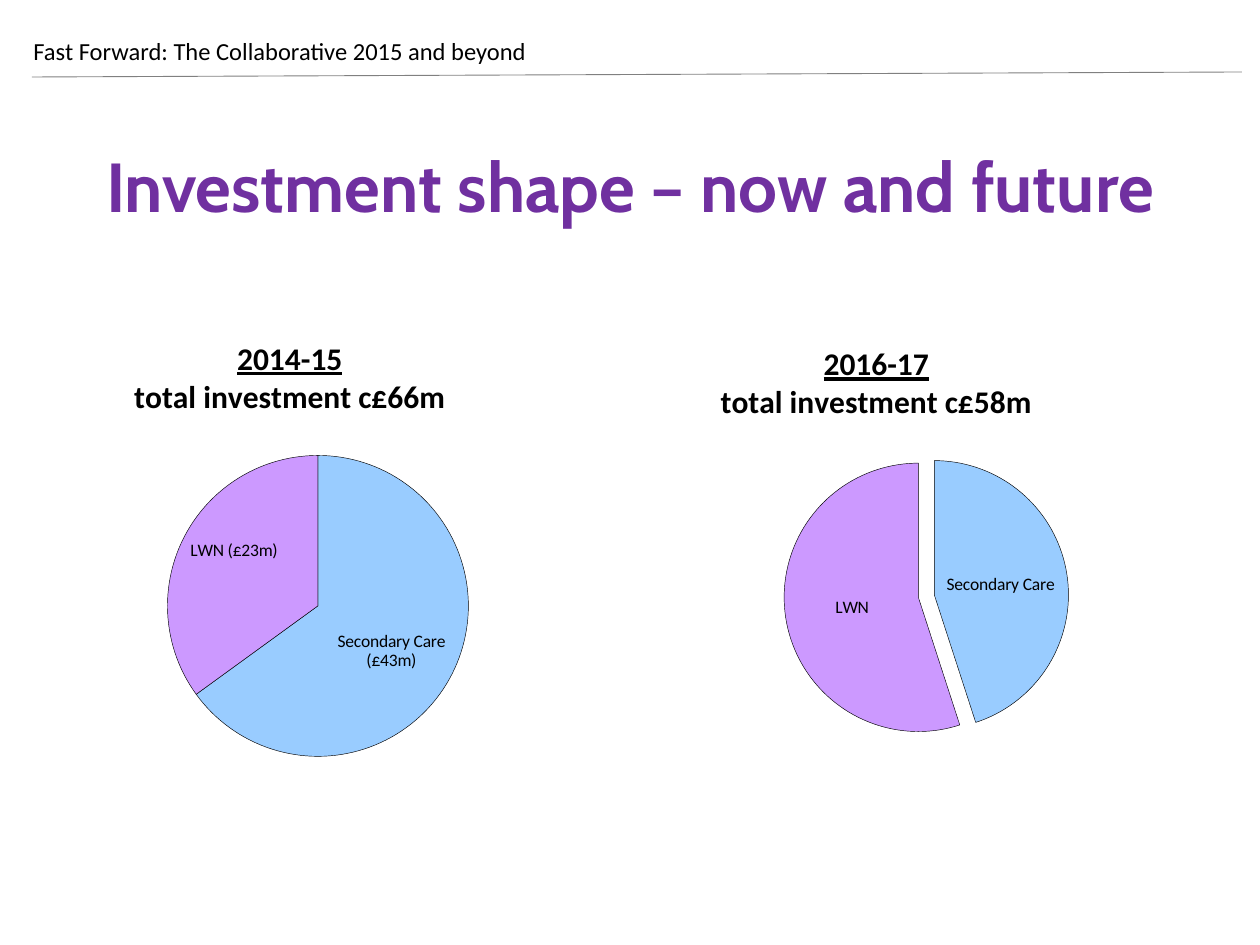
import pptx
import pptx.chart.data
import pptx.dml.color
import pptx.enum.chart
import pptx.enum.shapes
import pptx.enum.text
import pptx.oxml
import pptx.oxml.ns
import pptx.util

PX = 914400 // 126
BLACK = pptx.dml.color.RGBColor(0x00, 0x00, 0x00)
GREY = pptx.dml.color.RGBColor(0x80, 0x80, 0x80)
PURPLE = pptx.dml.color.RGBColor(0x70, 0x30, 0xA0)
SLICE_COLORS = (
    pptx.dml.color.RGBColor(0x99, 0xCC, 0xFF),
    pptx.dml.color.RGBColor(0xCC, 0x99, 0xFF),
)
LABEL_POSITION = pptx.enum.chart.XL_LABEL_POSITION
CENTER = pptx.enum.text.PP_ALIGN.CENTER


def px(*lengths):
    return [pptx.util.Emu(length * PX) for length in lengths]


def qn(tag):
    return pptx.oxml.ns.qn(tag)


def chart_element(tag, **attributes):
    element = pptx.oxml.parse_xml(f"<{tag} {pptx.oxml.ns.nsdecls('c')}/>")
    for name, value in attributes.items():
        element.set(name, str(value))
    return element


def format_font(font, size=10, name="Calibri", color=BLACK, bold=False, underline=False):
    font.size = pptx.util.Pt(size)
    font.name = name
    font.color.rgb = color
    font.bold = bold
    font.underline = underline


def add_text(paragraph, text, align=None, **font_format):
    paragraph.alignment = align
    run = paragraph.add_run()
    run.text = text
    format_font(run.font, **font_format)


def add_text_box(slide, box, text, **text_format):
    frame = slide.shapes.add_textbox(*px(*box)).text_frame
    frame.word_wrap = True
    frame.vertical_anchor = pptx.enum.text.MSO_ANCHOR.MIDDLE
    add_text(frame.paragraphs[0], text, **text_format)


def add_rule(slide, start, end):
    line = slide.shapes.add_connector(
        pptx.enum.shapes.MSO_CONNECTOR.STRAIGHT, *px(*start, *end))
    line.line.color.rgb = GREY
    line.line.width = pptx.util.Pt(0.5)
    line._element.spPr.append(
        pptx.oxml.parse_xml(f"<a:effectLst {pptx.oxml.ns.nsdecls('a')}/>"))


def set_layout(parent, index, inner=False, **fractions):
    """Place a chart part by fractions (x, y, w, h) of the chart's size."""
    for old in parent.findall(qn("c:layout")):
        parent.remove(old)
    manual = chart_element("c:manualLayout")
    if inner:
        manual.append(chart_element("c:layoutTarget", val="inner"))
    for key in "xy":
        manual.append(chart_element(f"c:{key}Mode", val="edge"))
    for key, value in fractions.items():
        manual.append(chart_element(f"c:{key}", val=value))
    layout = chart_element("c:layout")
    layout.append(manual)
    parent.insert(index, layout)


def add_chart_title(chart, year, total, x, y):
    title = chart.chart_title
    frame = title.text_frame
    add_text(frame.paragraphs[0], year, align=CENTER, size=18, bold=True, underline=True)
    add_text(frame.add_paragraph(), total, align=CENTER, size=18, bold=True)
    set_layout(title._element, 1, x=x, y=y)


def add_pie(slide, box, slices, title, plot_area, label_position, explosion=0):
    data = pptx.chart.data.CategoryChartData()
    data.categories = slices.keys()
    data.add_series("Series 1", slices.values())
    chart = slide.shapes.add_chart(
        pptx.enum.chart.XL_CHART_TYPE.PIE, *px(*box), data).chart
    format_font(chart.font)
    chart.has_legend = False
    add_chart_title(chart, *title)
    x, y, w, h = plot_area
    set_layout(chart._chartSpace.chart.plotArea, 0, inner=True, x=x, y=y, w=w, h=h)

    plot = chart.plots[0]
    plot.vary_by_categories = True
    series = plot.series[0]
    for index, color in enumerate(SLICE_COLORS):
        slice_format = series.points[index].format
        slice_format.fill.solid()
        slice_format.fill.fore_color.rgb = color
        slice_format.line.color.rgb = BLACK
        slice_format.line.width = pptx.util.Pt(0.25)
    if explosion:
        series._element.find(qn("c:dPt")).addprevious(
            chart_element("c:explosion", val=explosion))

    labels = series.data_labels
    labels.show_category_name = True
    labels.show_value = False
    labels.position = label_position
    format_font(labels.font)


def main():
    presentation = pptx.Presentation()
    presentation.slide_width, presentation.slide_height = px(1260, 945)
    slide = presentation.slides.add_slide(presentation.slide_layouts[6])

    add_rule(slide, (1242, 72), (32, 77))
    add_text_box(slide, (21, 29, 987, 43),
                 "Fast Forward: The Collaborative 2015 and beyond", size=14)
    add_text_box(slide, (63, 106, 1134, 157), "Investment shape – now and future",
                 align=CENTER, size=39.6, name="Cabin", color=PURPLE, bold=True)
    add_pie(slide, (83, 334, 528, 465),
            {"Secondary Care (£43m)": 65, "LWN (£23m)": 35},
            ("2014-15", "total investment c£66m", 0.09, 0),
            (0.16, 0.26, 0.57, 0.65), LABEL_POSITION.INSIDE_END)
    add_pie(slide, (668, 307, 544, 459),
            {"Secondary Care": 45, "LWN": 55},
            ("2016-17", "total investment c£58m", 0.09, 0.07),
            (0.21, 0.32, 0.53, 0.62), LABEL_POSITION.CENTER, explosion=6)
    presentation.save("out.pptx")


if __name__ == "__main__":
    main()
